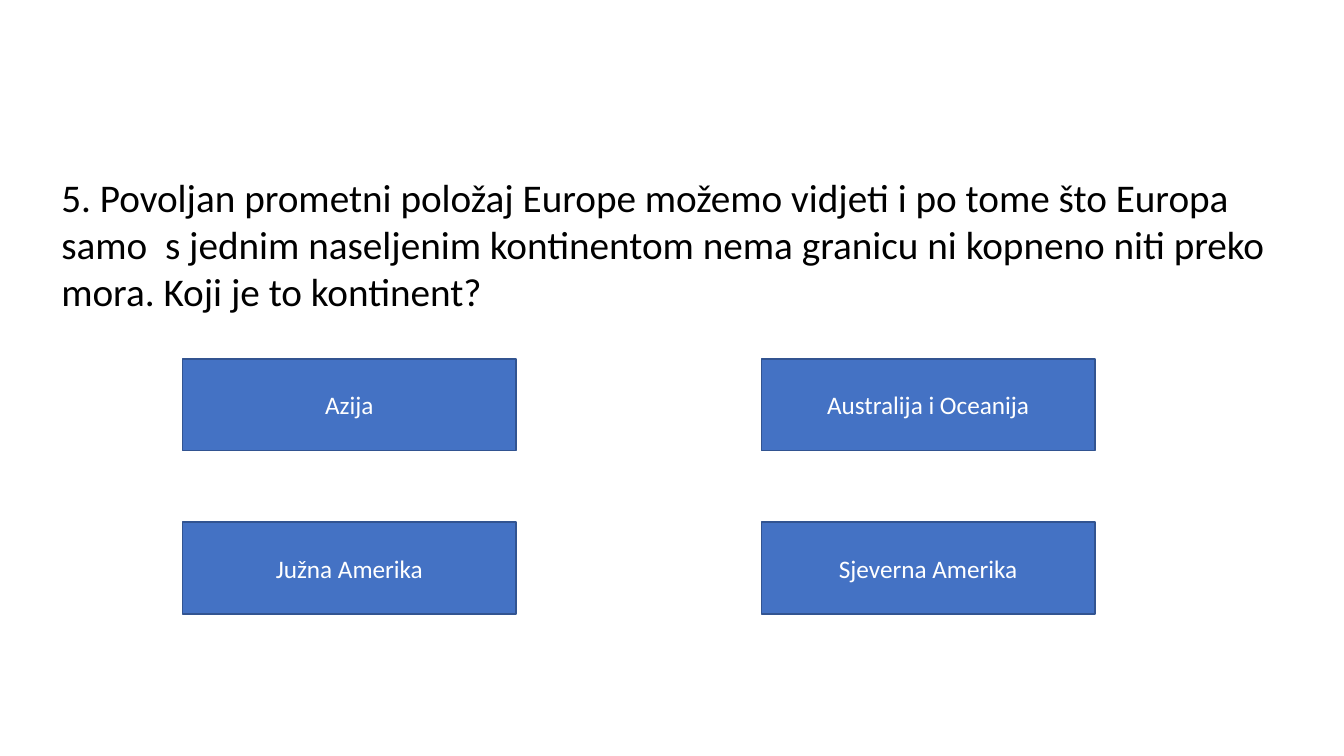
import pptx
import pptx.dml.color
import pptx.enum.shapes
import pptx.enum.text
import pptx.util

Inches = pptx.util.Inches
RGBColor = pptx.dml.color.RGBColor

FONT = "Calibri"
BLACK = RGBColor(0x00, 0x00, 0x00)
WHITE = RGBColor(0xFF, 0xFF, 0xFF)
BLUE = RGBColor(0x44, 0x72, 0xC4)
DARK_BLUE = RGBColor(0x32, 0x54, 0x91)

QUESTION = (
    "5. Povoljan prometni položaj Europe možemo vidjeti i po tome što Europa "
    "samo  s jednim naseljenim kontinentom nema granicu ni kopneno niti preko "
    "mora. Koji je to kontinent?"
)
ANSWERS = ["Azija", "Australija i Oceanija", "Južna Amerika", "Sjeverna Amerika"]
COLUMNS = 2
LEFT, TOP = 1.81, 3.56
COLUMN_STEP, ROW_STEP = 5.74, 1.62


def set_text(sp, text, size, color):
    tf = sp.text_frame
    tf.word_wrap = True
    p = tf.paragraphs[0]
    p.text = text
    p.font.name = FONT
    p.font.size = pptx.util.Pt(size)
    p.font.color.rgb = color
    return p


def add_question(s, text):
    sp = s.shapes.add_textbox(Inches(0.51), Inches(1.67), Inches(12.46), Inches(1.51))
    set_text(sp, text, 28, BLACK)
    sp.text_frame.auto_size = pptx.enum.text.MSO_AUTO_SIZE.SHAPE_TO_FIT_TEXT


def add_answer(s, text, left, top):
    sp = s.shapes.add_shape(
        pptx.enum.shapes.MSO_SHAPE.RECTANGLE,
        Inches(left), Inches(top), Inches(3.31), Inches(0.91),
    )
    sp.shadow.inherit = False
    sp.fill.solid()
    sp.fill.fore_color.rgb = BLUE
    sp.line.color.rgb = DARK_BLUE
    sp.line.width = pptx.util.Pt(1)
    p = set_text(sp, text, 18, WHITE)
    p.alignment = pptx.enum.text.PP_ALIGN.CENTER
    sp.text_frame.vertical_anchor = pptx.enum.text.MSO_ANCHOR.MIDDLE


def main():
    prs = pptx.Presentation()
    prs.slide_width = Inches(13.33)
    prs.slide_height = Inches(7.5)
    s = prs.slides.add_slide(prs.slide_layouts[6])
    add_question(s, QUESTION)
    for i, answer in enumerate(ANSWERS):
        row, column = divmod(i, COLUMNS)
        add_answer(s, answer, LEFT + column * COLUMN_STEP, TOP + row * ROW_STEP)
    prs.save("out.pptx")


if __name__ == "__main__":
    main()
